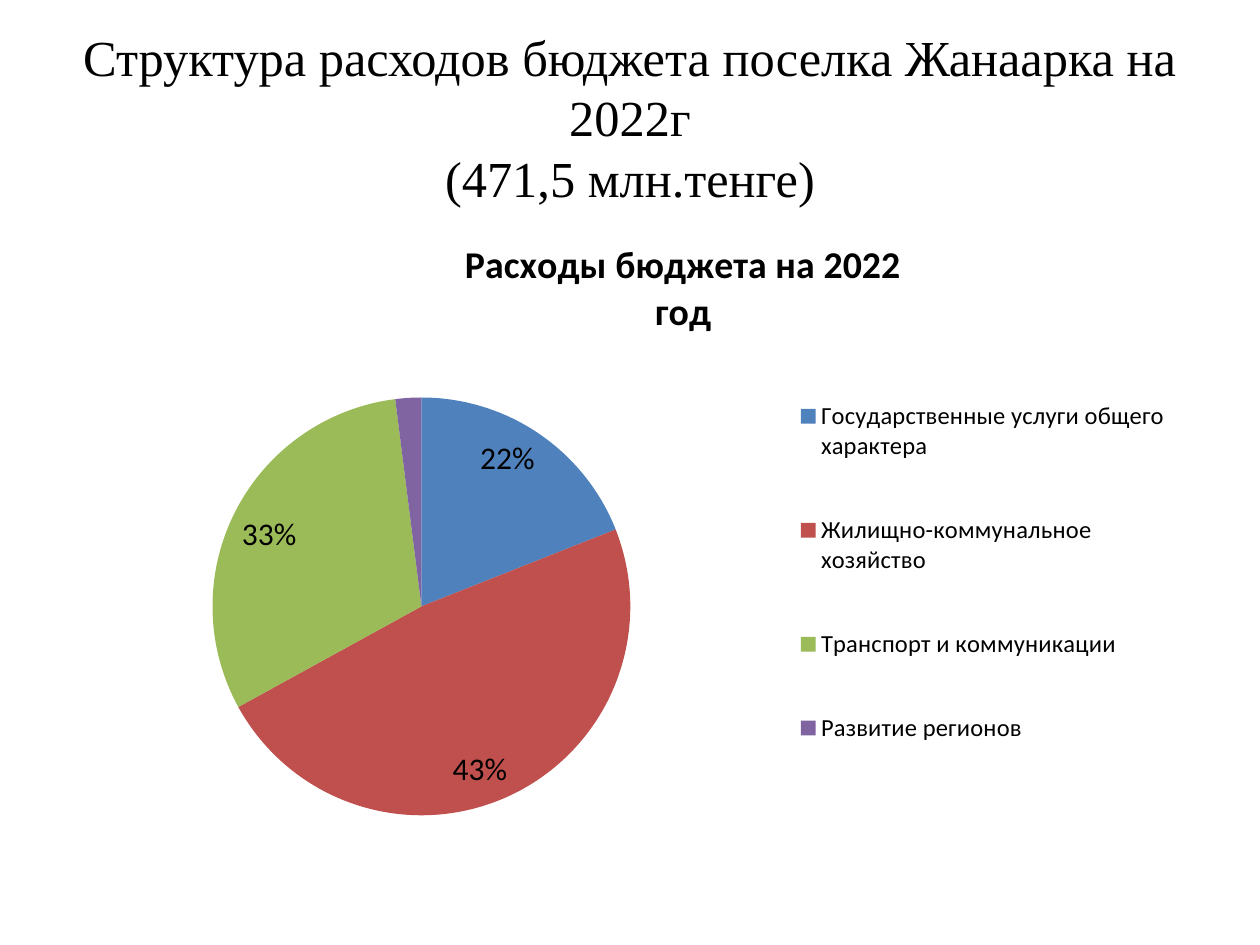
from dataclasses import dataclass

from lxml.etree import SubElement
from pptx import Presentation
from pptx.chart.data import CategoryChartData
from pptx.dml.color import RGBColor
from pptx.enum.chart import XL_CHART_TYPE as ChartType
from pptx.enum.chart import XL_LABEL_POSITION as LabelPos
from pptx.enum.chart import XL_LEGEND_POSITION as LegendPos
from pptx.enum.text import MSO_ANCHOR as Anchor
from pptx.enum.text import PP_ALIGN as Align
from pptx.oxml.ns import qn
from pptx.util import Inches, Pt

SLIDE_W, SLIDE_H = Inches(10), Inches(7.5)
BLACK = "000000"
HEADING_FONT, CHART_FONT = "Times New Roman", "Calibri"


@dataclass
class Expense:
    name: str
    share: int
    color: str
    label: str = ""  # replaces the computed percentage


EXPENSES = [
    Expense("Государственные услуги общего характера", 19, "4F81BD", "22%"),
    Expense("Жилищно-коммунальное хозяйство", 48, "C0504D", "43%"),
    Expense("Транспорт и коммуникации", 31, "9BBB59", "33%"),
    Expense("Развитие регионов", 2, "8064A2"),
]


def rgb(value: str) -> RGBColor:
    return RGBColor.from_string(value)


def style_font(font, name: str, size: float, bold: bool = False) -> None:
    font.name, font.size, font.bold = name, Pt(size), bold
    font.color.rgb = rgb(BLACK)


def style_runs(text_frame, name: str, size: float, bold: bool = False) -> None:
    for paragraph in text_frame.paragraphs:
        for run in paragraph.runs:
            style_font(run.font, name, size, bold)


def place(part, inner: bool = False, **shares: float) -> None:
    """Fix a chart part at x, y, w, h given as shares of the chart's size."""
    for old in part.findall(qn("c:layout")):
        part.remove(old)
    layout = part.makeelement(qn("c:layout"))
    overlay = part.find(qn("c:overlay"))
    if overlay is None:
        part.insert(0, layout)
    else:
        overlay.addprevious(layout)
    manual = SubElement(layout, qn("c:manualLayout"))
    if inner:
        SubElement(manual, qn("c:layoutTarget")).set("val", "inner")
    for axis in "xy":
        SubElement(manual, qn(f"c:{axis}Mode")).set("val", "edge")
    for side, share in shares.items():
        SubElement(manual, qn(f"c:{side}")).set("val", str(share))


def add_heading(slide, text: str) -> None:
    box = slide.shapes.add_textbox(
        int(SLIDE_W * 0.05), int(SLIDE_H * 0.04), int(SLIDE_W * 0.9), int(SLIDE_H / 6))
    frame = box.text_frame
    frame.word_wrap = True
    frame.vertical_anchor = Anchor.MIDDLE
    frame.text = text
    frame.paragraphs[0].alignment = Align.CENTER
    style_runs(frame, HEADING_FONT, 28.8)


def add_expense_pie(slide, title: str, expenses: list[Expense]) -> None:
    data = CategoryChartData()
    data.categories = [expense.name for expense in expenses]
    data.add_series(title.replace("\v", " "), [expense.share for expense in expenses])
    chart = slide.shapes.add_chart(
        ChartType.PIE, Inches(0.42), Inches(1.67), Inches(9), Inches(4.95), data).chart
    style_font(chart.font, CHART_FONT, 18)

    chart.has_title = True
    chart.chart_title.text_frame.text = title
    style_runs(chart.chart_title.text_frame, CHART_FONT, 21.6, bold=True)

    chart.has_legend = True
    legend = chart.legend
    legend.position = LegendPos.RIGHT
    legend.include_in_layout = False
    style_font(legend.font, CHART_FONT, 14)

    pie = chart.plots[0]
    pie.vary_by_categories = True
    pie.has_data_labels = True
    labels = pie.data_labels
    labels.show_percentage, labels.show_value = True, False
    labels.number_format, labels.number_format_is_linked = "0%", False
    labels.position = LabelPos.OUTSIDE_END
    style_font(labels.font, CHART_FONT, 18)

    for index, expense in enumerate(expenses):
        point = pie.series[0].points[index]
        point.format.fill.solid()
        point.format.fill.fore_color.rgb = rgb(expense.color)
        if expense.label:
            label = point.data_label
            label.text_frame.text = expense.label
            style_runs(label.text_frame, CHART_FONT, 18)
            label.position = LabelPos.INSIDE_END

    plot_area = chart.element.find(".//" + qn("c:plotArea"))
    place(chart.chart_title.element if hasattr(chart.chart_title, "element")
          else chart.element.find(".//" + qn("c:title")), x=0.36, y=0.04)
    place(plot_area, inner=True, x=0.14, y=0.3, w=0.37, h=0.67)
    place(chart.element.find(".//" + qn("c:legend")), x=0.65, y=0.22, w=0.34, h=0.72)


def main() -> None:
    deck = Presentation()
    deck.slide_width, deck.slide_height = SLIDE_W, SLIDE_H
    slide = deck.slides.add_slide(deck.slide_layouts[6])
    add_heading(slide, "Структура расходов бюджета поселка Жанаарка на 2022г\v(471,5 млн.тенге)")
    add_expense_pie(slide, "Расходы бюджета на 2022\vгод", EXPENSES)
    deck.save("out.pptx")


if __name__ == "__main__":
    main()
